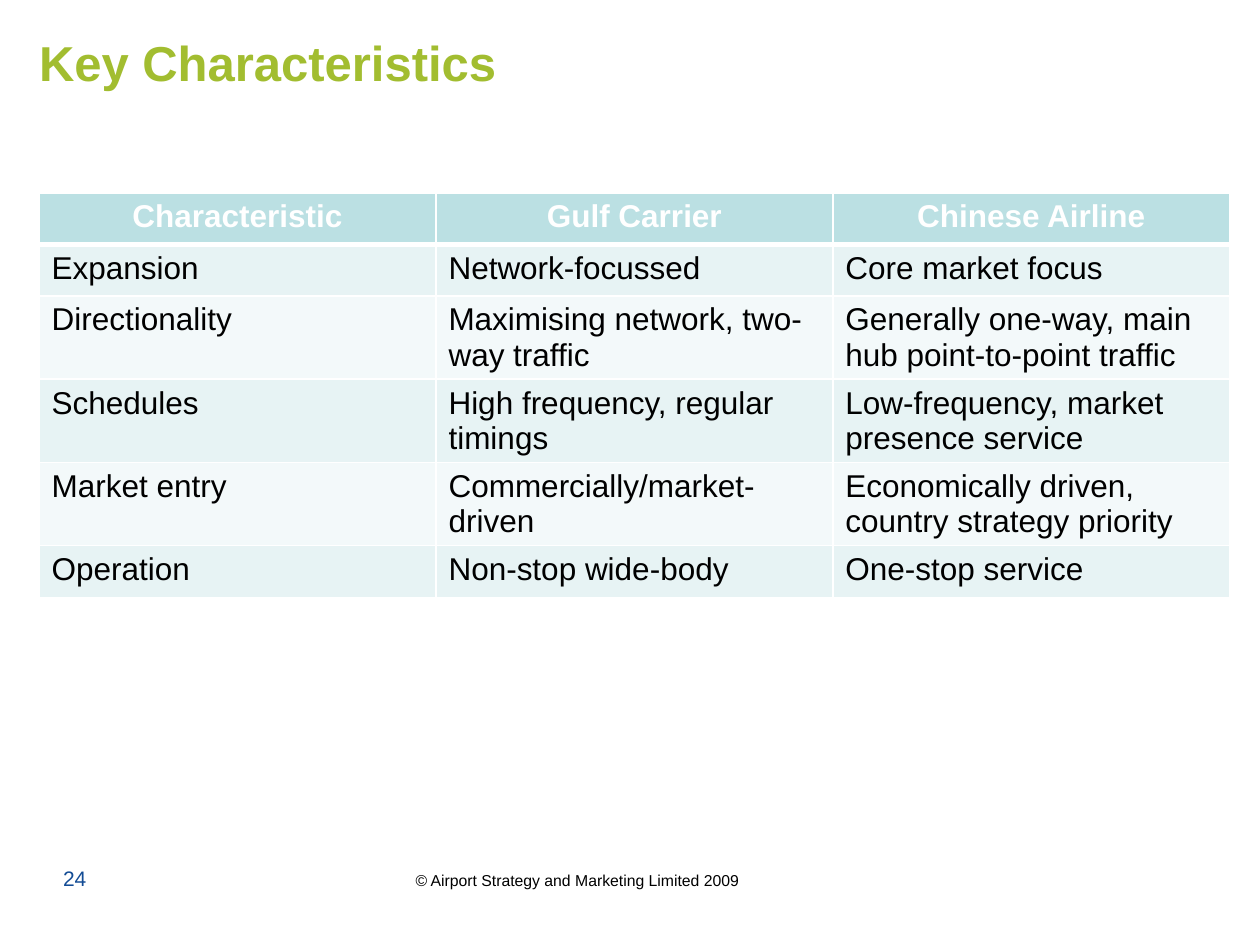
from lxml.etree import SubElement
from pptx import Presentation
from pptx.dml.color import RGBColor
from pptx.enum.text import MSO_ANCHOR as Anchor, PP_ALIGN as Align
from pptx.oxml.ns import qn
from pptx.util import Inches, Pt

GREEN = RGBColor(0xA2, 0xBD, 0x30)
BLUE = RGBColor(0x13, 0x4C, 0x95)
BLACK = RGBColor(0, 0, 0)
WHITE = RGBColor(0xFF, 0xFF, 0xFF)
HEADER = RGBColor(0xBB, 0xE0, 0xE3)
BANDS = (RGBColor(0xF3, 0xF9, 0xFA), RGBColor(0xE7, 0xF3, 0xF4))

LEFT = Inches(0.31)
COLUMN = Inches(3.15)
ROW = Inches(0.41)

ROWS = [
    ("Characteristic", "Gulf Carrier", "Chinese Airline"),
    ("Expansion", "Network-focussed", "Core market focus"),
    ("Directionality", "Maximising network, two-way traffic",
     "Generally one-way, main hub point-to-point traffic"),
    ("Schedules", "High frequency, regular timings",
     "Low-frequency, market presence service"),
    ("Market entry", "Commercially/market-driven",
     "Economically driven, country strategy priority"),
    ("Operation", "Non-stop wide-body", "One-stop service"),
]


def write(frame, text, size, color, bold=False, align=Align.LEFT):
    para = frame.paragraphs[0]
    para.alignment = align
    span = para.add_run()
    span.text = text
    span.font.name = "Arial"
    span.font.size = Pt(size)
    span.font.bold = bold
    span.font.color.rgb = color


def add_border(cell, side, points):
    line = SubElement(cell._tc.get_or_add_tcPr(), qn(f"a:ln{side}"), w=str(Pt(points)))
    fill = SubElement(line, qn("a:solidFill"))
    SubElement(fill, qn("a:srgbClr"), val=str(WHITE))


deck = Presentation()
deck.slide_width, deck.slide_height = Inches(10), Inches(7.5)
page = deck.slides.add_slide(deck.slide_layouts[5])

# Title
title = page.shapes.title
title.left, title.top = LEFT, Inches(0.16)
title.width, title.height = Inches(8.67), Inches(0.67)
frame = title.text_frame
frame.margin_left = frame.margin_top = frame.margin_right = frame.margin_bottom = 0
frame.vertical_anchor = Anchor.MIDDLE
write(frame, "Key Characteristics", 28, GREEN, bold=True)

# Comparison table
table = page.shapes.add_table(len(ROWS), len(ROWS[0]), LEFT, Inches(1.53),
                              COLUMN * len(ROWS[0]), ROW * len(ROWS)).table
for column in table.columns:
    column.width = COLUMN
for row, texts in enumerate(ROWS):
    table.rows[row].height = ROW
    is_header = row == 0
    for column, text in enumerate(texts):
        cell = table.cell(row, column)
        for side in "LRTB":
            header_rule = (row, side) in ((0, "B"), (1, "T"))
            add_border(cell, side, 3 if header_rule else 1)
        cell.fill.solid()
        cell.fill.fore_color.rgb = HEADER if is_header else BANDS[row % 2]
        write(cell.text_frame, text, 18, WHITE if is_header else BLACK,
              bold=is_header, align=Align.CENTER if is_header else Align.LEFT)

# Footer
number = page.shapes.add_textbox(Inches(0.5), Inches(6.87), Inches(1.19), Inches(0.43))
frame = number.text_frame
frame.word_wrap = True
frame.margin_left = frame.margin_top = frame.margin_right = frame.margin_bottom = 0
write(frame, "24", 12, BLUE)

notice = page.shapes.add_textbox(Inches(3.2), Inches(6.86), Inches(2.97), Inches(0.25))
notice.text_frame.word_wrap = True
write(notice.text_frame, "© Airport Strategy and Marketing Limited 2009", 9, BLACK)

deck.save("out.pptx")
